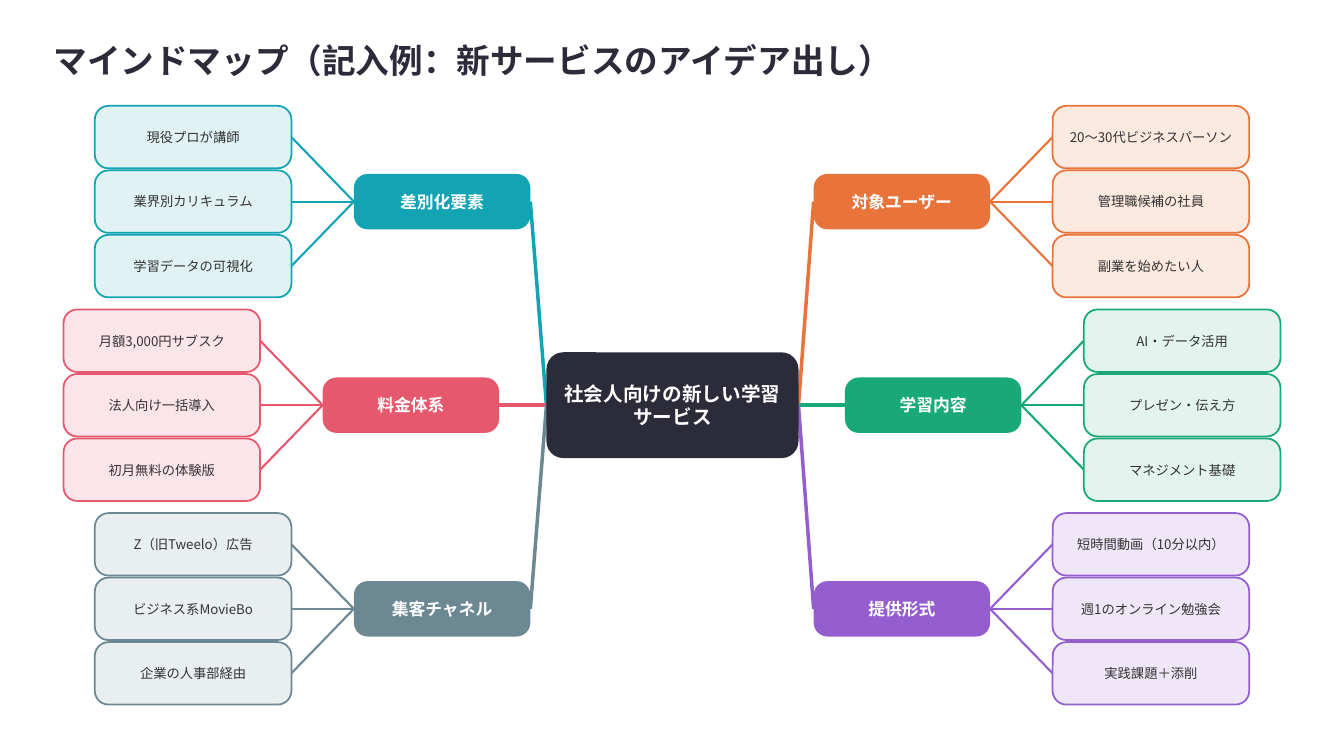
from dataclasses import dataclass

from lxml.etree import SubElement
from pptx import Presentation
from pptx.dml.color import RGBColor
from pptx.enum.shapes import MSO_CONNECTOR as CONN, MSO_SHAPE as SHAPE
from pptx.enum.text import MSO_ANCHOR as ANCHOR, MSO_AUTO_SIZE as AUTO, PP_ALIGN as ALIGN
from pptx.oxml.ns import qn
from pptx.util import Emu, Pt


@dataclass(frozen=True)
class Theme:
    font: str = "Noto Sans CJK JP"
    dark: str = "2B2B3A"
    body: str = "333333"
    white: str = "FFFFFF"
    orange: tuple = ("E8743B", "FCE9E0")
    green: tuple = ("19A979", "E3F4EE")
    purple: tuple = ("945ECF", "EFE7F7")
    teal: tuple = ("13A4B4", "E0F2F4")
    red: tuple = ("E6586E", "FBE5EA")
    gray: tuple = ("6C8893", "E9EEF0")
    title_size: float = 24
    centre_size: float = 14
    topic_size: float = 12
    idea_size: float = 9.5
    trunk: float = 2.5
    twig: float = 1.5
    border: float = 1.25


T = Theme()
W, H = 1333, 750
CENTRE_X, CENTRE_Y = 667, 402
CENTRE_W, CENTRE_H = 250, 105
TOPIC_W, TOPIC_H = 175, 55
IDEA_W, IDEA_H = 195, 62
ROW_STEP, IDEA_STEP, TWIG_W = 202, 64, 62
TOPIC_NEAR, TOPIC_FAR = 807, 838

RIGHT = [
    ("対象ユーザー", T.orange, ["20〜30代ビジネスパーソン", "管理職候補の社員", "副業を始めたい人"]),
    ("学習内容", T.green, ["AI・データ活用", "プレゼン・伝え方", "マネジメント基礎"]),
    ("提供形式", T.purple, ["短時間動画（10分以内）", "週1のオンライン勉強会", "実践課題＋添削"]),
]
LEFT = [
    ("差別化要素", T.teal, ["現役プロが講師", "業界別カリキュラム", "学習データの可視化"]),
    ("料金体系", T.red, ["月額3,000円サブスク", "法人向け一括導入", "初月無料の体験版"]),
    ("集客チャネル", T.gray, ["Z（旧Tweelo）広告", "ビジネス系MovieBo", "企業の人事部経由"]),
]


def px(n):
    return Emu(round(n * 9144))


def rgb(color):
    return RGBColor.from_string(color)


class MindMap:
    """Draws mind map elements on one slide in a given theme."""

    def __init__(self, prs, theme):
        self.t = theme
        self.s = prs.slides.add_slide(prs.slide_layouts[5])

    def text(self, tf, text, size, color, bold, align, margins):
        tf.word_wrap = True
        tf.vertical_anchor = ANCHOR.MIDDLE
        tf.margin_left = tf.margin_right = px(margins[0])
        tf.margin_top = tf.margin_bottom = px(margins[1])
        p = tf.paragraphs[0]
        p.alignment = align
        r = p.add_run()
        r.text = text
        r.font.size, r.font.bold, r.font.name = Pt(size), bold, self.t.font
        r.font.color.rgb = rgb(color)
        SubElement(r.font._element, qn("a:ea")).set("typeface", self.t.font)

    def title(self, text, x, y, w, h):
        sp = self.s.shapes.title
        sp.left, sp.top, sp.width, sp.height = map(px, (x, y, w, h))
        self.text(sp.text_frame, text, self.t.title_size, self.t.dark, True, ALIGN.LEFT, (3, 1))
        sp.text_frame.auto_size = AUTO.SHAPE_TO_FIT_TEXT

    def line(self, x1, y1, x2, y2, color, width):
        c = self.s.shapes.add_connector(CONN.STRAIGHT, *map(px, (x1, y1, x2, y2)))
        c.line.color.rgb = rgb(color)
        c.line.width = Pt(width)
        SubElement(c._element.spPr, qn("a:effectLst"))

    def box(self, x, mid_y, w, h, radius, text, size, fill, color, bold=True, border=None):
        sp = self.s.shapes.add_shape(SHAPE.ROUNDED_RECTANGLE, *map(px, (x, mid_y - h / 2, w, h)))
        sp.shadow.inherit = False
        sp.adjustments[0] = radius
        sp.fill.solid()
        sp.fill.fore_color.rgb = rgb(fill)
        if border:
            sp.line.color.rgb = rgb(border)
            sp.line.width = Pt(self.t.border)
        else:
            sp.line.fill.background()
        self.text(sp.text_frame, text, size, color, bold, ALIGN.CENTER, (6, 3))

    def branch_lines(self, b):
        strong = b["colors"][0]
        self.line(b["root"], CENTRE_Y, b["inner"], b["y"], strong, self.t.trunk)
        for y in b["idea_ys"]:
            self.line(b["outer"], b["y"], b["idea_edge"], y, strong, self.t.twig)

    def ideas(self, b):
        strong, pale = b["colors"]
        for text, y in zip(b["ideas"], b["idea_ys"]):
            self.box(b["idea_x"], y, IDEA_W, IDEA_H, 0.22, text,
                     self.t.idea_size, pale, self.t.body, False, strong)

    def topic(self, b):
        self.box(min(b["inner"], b["outer"]), b["y"], TOPIC_W, TOPIC_H, 0.25, b["name"],
                 self.t.topic_size, b["colors"][0], self.t.white)

    def centre(self, text):
        self.box(CENTRE_X - CENTRE_W // 2, CENTRE_Y, CENTRE_W, CENTRE_H, 0.16, text,
                 self.t.centre_size, self.t.dark, self.t.white)


def place(row, side, name, colors, ideas):
    y = CENTRE_Y + (row - 1) * ROW_STEP
    inner = TOPIC_FAR if row == 1 else TOPIC_NEAR
    if side < 0:
        inner = W - inner
    outer = inner + side * TOPIC_W
    edge = outer + side * TWIG_W
    return dict(name=name, colors=colors, ideas=ideas, y=y, inner=inner, outer=outer,
                root=CENTRE_X + side * CENTRE_W // 2, idea_edge=edge,
                idea_x=min(edge, edge + side * IDEA_W),
                idea_ys=[y + (i - 1) * IDEA_STEP for i in range(len(ideas))])


def main():
    prs = Presentation()
    prs.slide_width, prs.slide_height = px(W), px(H)
    m = MindMap(prs, T)
    m.title("マインドマップ（記入例：新サービスのアイデア出し）", 50, 25, 1230, 70)
    branches = [place(row, side, *topic)
                for side, topics in ((1, RIGHT), (-1, LEFT))
                for row, topic in enumerate(topics)]
    for draw in (m.branch_lines, m.ideas, m.topic):
        for b in branches:
            draw(b)
    m.centre("社会人向けの新しい学習サービス")
    prs.save("out.pptx")


if __name__ == "__main__":
    main()
